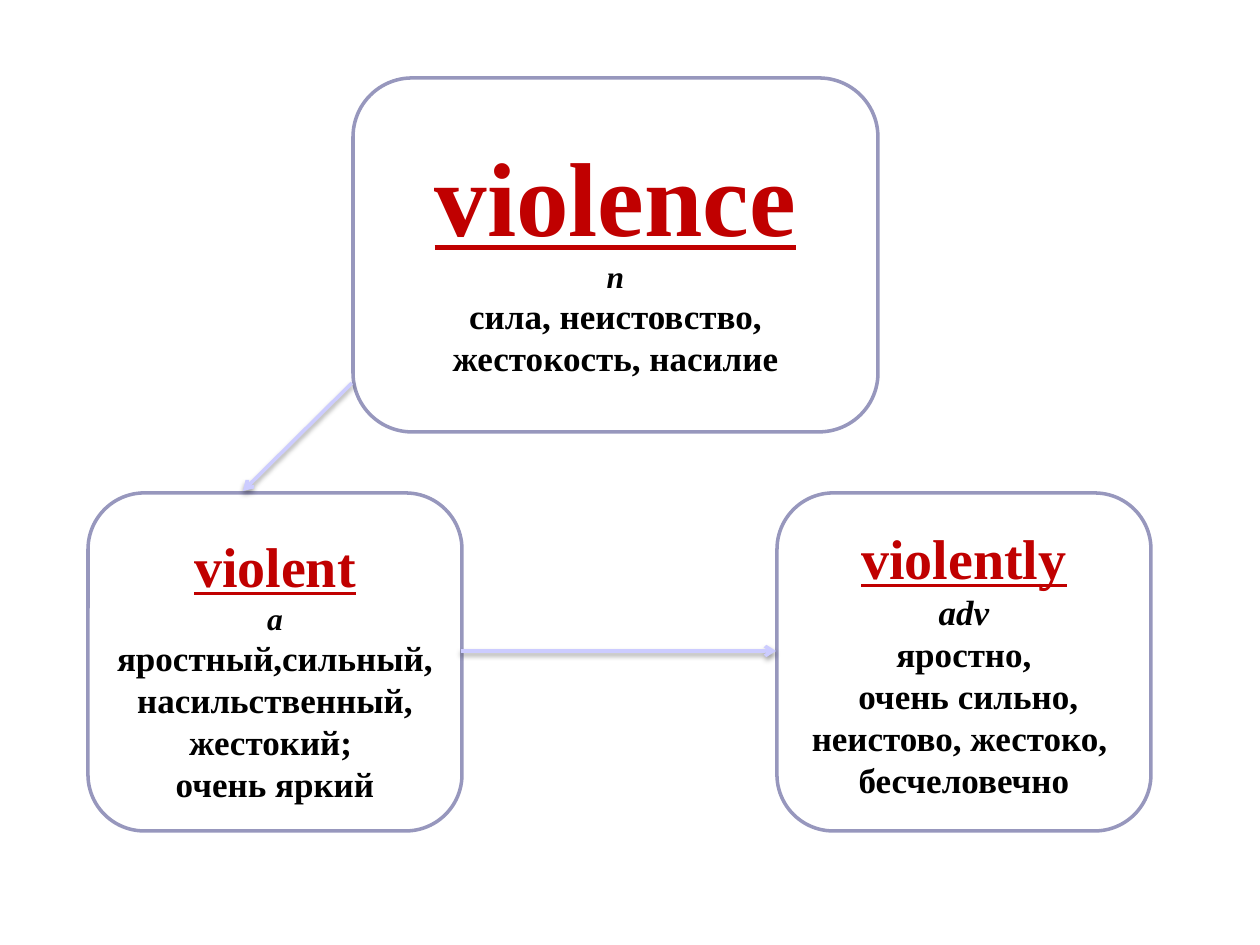
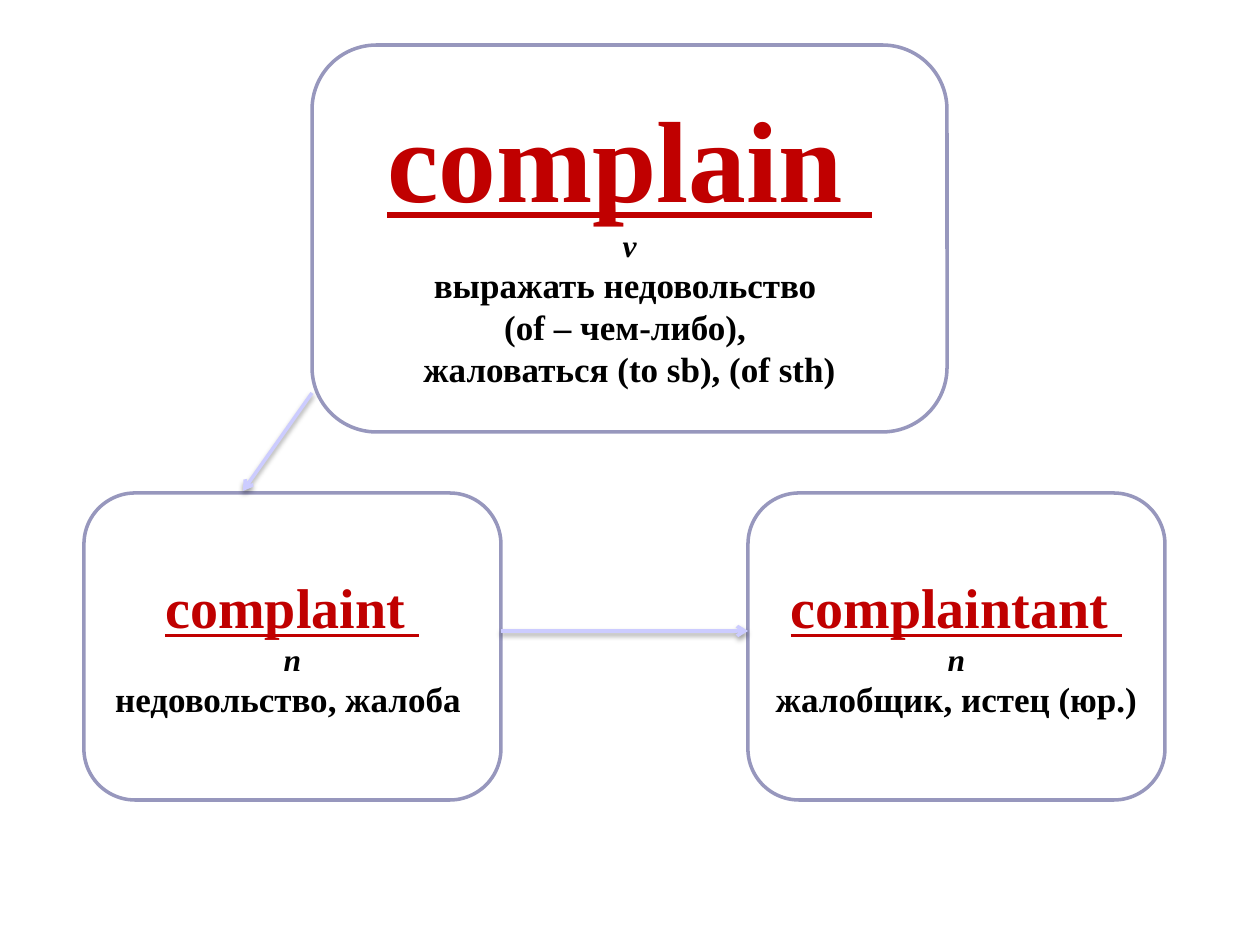
from dataclasses import dataclass

from lxml.etree import SubElement
from pptx import Presentation
from pptx.dml.color import RGBColor
from pptx.enum.shapes import MSO_CONNECTOR as Connector, MSO_SHAPE as Preset
from pptx.enum.text import MSO_ANCHOR as Anchor, PP_ALIGN as Align
from pptx.oxml import parse_xml
from pptx.oxml.ns import qn
from pptx.util import Emu, Pt

# Content: each family has a head word, its first derivative (left) and second (right)
FAMILIES = [
    {
        "words": [
            {"word": "violence", "size": 60, "box": (353, 78, 525, 354),
             "part": "n", "meaning": ["сила, неистовство, жестокость, насилие"]},
            {"word": "violent", "box": (88, 493, 374, 338), "drop": 12,
             "part": "a",
             "meaning": ["яростный,сильный, насильственный, жестокий; ",
                         "очень яркий"]},
            {"word": "violently", "box": (777, 493, 374, 338),
             "part": "adv", "part_size": 20,
             "meaning": ["яростно,", " очень сильно, неистово, жестоко, ",
                         "бесчеловечно"]},
        ],
        "arrows": [((352, 383), (243, 491)), ((461, 651), (776, 651))],
    },
    {
        "words": [
            {"word": "complain ", "size": 66, "box": (312, 45, 635, 387),
             "part": "v",
             "meaning": ["выражать недовольство ", "(of – чем-либо), ",
                         "жаловаться (to sb), (of sth)"]},
            {"word": "complaint ", "box": (84, 493, 417, 307),
             "part": "n", "meaning": ["недовольство, жалоба "]},
            {"word": "complaintant ", "box": (748, 493, 417, 307),
             "part": "n", "meaning": ["жалобщик, истец (юр.) "]},
        ],
        "arrows": [((312, 393), (243, 491)), ((501, 631), (748, 631))],
    },
]


@dataclass(frozen=True)
class Theme:
    font: str = "Times New Roman"
    paper: str = "FFFFFF"
    border: str = "9797BD"
    arrow: str = "CCCCFF"
    word: str = "C00000"
    text: str = "000000"
    word_size: int = 32
    part_size: int = 18
    meaning_size: int = 20
    line_width: int = 2


THEME = Theme()
SLIDE_WIDTH, SLIDE_HEIGHT = 1260, 945
INSET = 6

SHADOW = (
    '<a:effectLst xmlns:a="http://schemas.openxmlformats.org/drawingml/2006/main">'
    '<a:outerShdw blurRad="39370" dist="20320" dir="5400000" rotWithShape="0">'
    '<a:srgbClr val="000000"><a:alpha val="38000"/></a:srgbClr>'
    '</a:outerShdw></a:effectLst>'
)


def px(length):
    return Emu(length * 914400 // 126)


def color(value):
    return RGBColor.from_string(value)


def add_text(paragraph, text, *, size, fill=THEME.text, italic=False,
             underline=False):
    paragraph.alignment = Align.CENTER
    run = paragraph.add_run()
    run.text = text
    font = run.font
    font.name, font.size, font.bold = THEME.font, Pt(size), True
    font.italic, font.underline = italic, underline
    font.color.rgb = color(fill)


def add_word_box(slide, entry):
    shape = slide.shapes.add_shape(Preset.ROUNDED_RECTANGLE,
                                   *map(px, entry["box"]))
    shape.shadow.inherit = False
    shape.fill.solid()
    shape.fill.fore_color.rgb = color(THEME.paper)
    shape.line.color.rgb = color(THEME.border)
    shape.line.width = Pt(THEME.line_width)

    frame = shape.text_frame
    frame.word_wrap = True
    frame.vertical_anchor = Anchor.MIDDLE
    frame.margin_top = px(INSET + entry.get("drop", 0))
    frame.margin_bottom = px(INSET)

    # Word, part of speech, then its meanings
    add_text(frame.paragraphs[0], entry["word"], fill=THEME.word,
             size=entry.get("size", THEME.word_size), underline=True)
    add_text(frame.add_paragraph(), entry["part"], italic=True,
             size=entry.get("part_size", THEME.part_size))
    for line in entry["meaning"]:
        add_text(frame.add_paragraph(), line, size=THEME.meaning_size)


def add_arrow(slide, start, end):
    connector = slide.shapes.add_connector(Connector.STRAIGHT,
                                           *map(px, start + end))
    connector.line.color.rgb = color(THEME.arrow)
    connector.line.width = Pt(THEME.line_width)
    SubElement(connector.line._get_or_add_ln(), qn("a:tailEnd"), type="arrow")
    connector._element.spPr.append(parse_xml(SHADOW))


def main():
    presentation = Presentation()
    presentation.slide_width = px(SLIDE_WIDTH)
    presentation.slide_height = px(SLIDE_HEIGHT)
    blank = presentation.slide_layouts[6]
    for family in FAMILIES:
        slide = presentation.slides.add_slide(blank)
        for entry in family["words"]:
            add_word_box(slide, entry)
        for start, end in family["arrows"]:
            add_arrow(slide, start, end)
    presentation.save("out.pptx")


if __name__ == "__main__":
    main()
